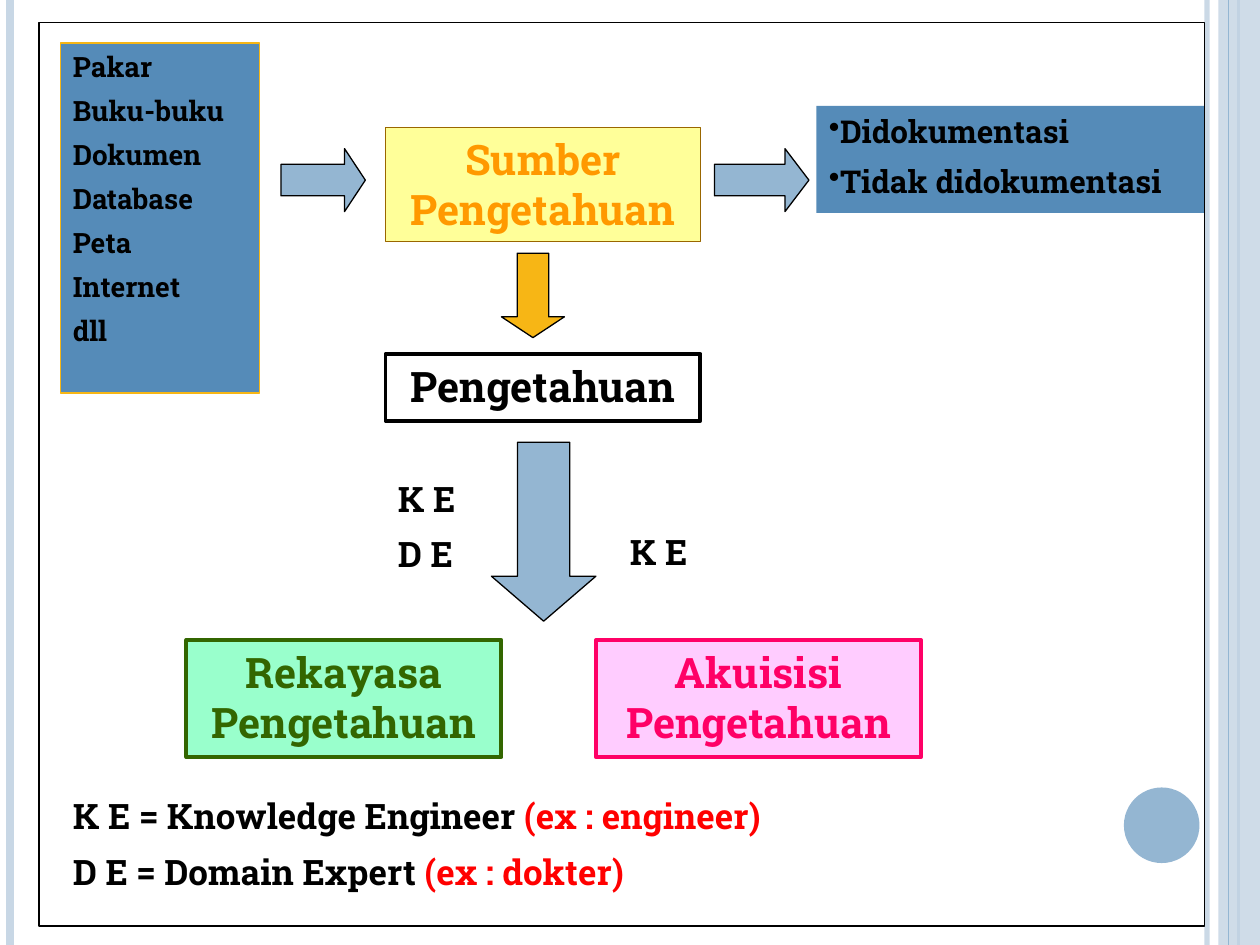
"""Build the knowledge sources and knowledge acquisition flow slide."""
from lxml.etree import SubElement
from pptx import Presentation
from pptx.dml.color import RGBColor
from pptx.enum.shapes import MSO_CONNECTOR, MSO_SHAPE as Shape
from pptx.enum.text import MSO_ANCHOR, PP_ALIGN as Align
from pptx.oxml.ns import qn
from pptx.util import Inches, Pt

FONT = "Roboto Slab"
BLACK = RGBColor(0x00, 0x00, 0x00)
RED = RGBColor(0xFF, 0x00, 0x00)
PALE_BLUE = RGBColor(0xC8, 0xD7, 0xE5)
SKY = RGBColor(0x94, 0xB6, 0xD2)
STEEL = RGBColor(0x55, 0x8B, 0xB8)
AMBER = RGBColor(0xF7, 0xB6, 0x15)
YELLOW = RGBColor(0xFF, 0xFF, 0x99)
BROWN = RGBColor(0x99, 0x66, 0x00)
ORANGE = RGBColor(0xFF, 0x99, 0x00)
PINK = RGBColor(0xFF, 0xCC, 0xFF)
MAGENTA = RGBColor(0xFF, 0x00, 0x66)
MINT = RGBColor(0x99, 0xFF, 0xCC)
GREEN = RGBColor(0x33, 0x66, 0x00)


def set_opacity(element, percent):
    color = next(element.iter(qn("a:srgbClr")))
    SubElement(color, qn("a:alpha"), val=str(percent * 1000))


def add_stripe(slide, x, color, width, opacity=100):
    stripe = slide.shapes.add_connector(
        MSO_CONNECTOR.STRAIGHT, Inches(x), 0, Inches(x), Inches(7.5))
    stripe.line.color.rgb = color
    stripe.line.width = Pt(width)
    properties = stripe.line._get_or_add_ln().getparent()
    SubElement(properties, qn("a:effectLst"))
    if opacity < 100:
        set_opacity(properties, opacity)


def add_block(slide, kind, at, fill=None, line=None, width=0.75):
    block = slide.shapes.add_shape(kind, *map(Inches, at))
    block.shadow.inherit = False
    if fill is None:
        block.fill.background()
    else:
        block.fill.solid()
        block.fill.fore_color.rgb = fill
    if line is None:
        block.line.fill.background()
    else:
        block.line.color.rgb = line
        block.line.width = Pt(width)
    return block


def add_arrow(slide, kind, at, head, fill=SKY):
    arrow = add_block(slide, kind, at, fill, BLACK)
    arrow.adjustments[1] = head


def write(holder, paragraphs, size, color=BLACK, align=Align.LEFT, bullet=None):
    """Write paragraphs, each a string or a list of (text, color) runs."""
    frame = holder.text_frame
    frame.word_wrap = True
    frame.vertical_anchor = MSO_ANCHOR.TOP
    for index, content in enumerate(paragraphs):
        paragraph = frame.add_paragraph() if index else frame.paragraphs[0]
        paragraph.alignment = align
        if index:
            paragraph.space_before = Pt(size * 0.375)
        if bullet:
            SubElement(paragraph._p.get_or_add_pPr(), qn("a:buChar"), char=bullet)
        runs = [(content, color)] if isinstance(content, str) else content
        for text, run_color in runs:
            run = paragraph.add_run()
            run.text = text
            run.font.name = FONT
            run.font.size = Pt(size)
            run.font.bold = True
            run.font.color.rgb = run_color


def add_stage(slide, title, at, color, fill=None, line=None, width=2.25):
    stage = add_block(slide, Shape.RECTANGLE, at, fill, line or color, width)
    write(stage, [title], 24, color, Align.CENTER)


def add_label(slide, paragraphs, at):
    write(slide.shapes.add_textbox(*map(Inches, at)), paragraphs, 20)


def add_backdrop(slide):
    add_stripe(slide, 9.58, PALE_BLUE, 3, 93)
    add_stripe(slide, 0.08, PALE_BLUE, 4.5)
    add_stripe(slide, 9.83, SKY, 1.5)
    band = add_block(slide, Shape.RECTANGLE, (9.67, 0, 0.33, 7.5), PALE_BLUE)
    set_opacity(band.fill._xPr, 87)
    add_stripe(slide, 9.75, SKY, 0.75)
    add_block(slide, Shape.OVAL, (8.92, 6.25, 0.6, 0.6), SKY)


def main():
    deck = Presentation()
    deck.slide_width, deck.slide_height = Inches(10), Inches(7.5)
    slide = deck.slides.add_slide(deck.slide_layouts[6])
    add_backdrop(slide)

    add_stage(slide, "Sumber Pengetahuan", (3.06, 1.01, 2.5, 0.91),
              ORANGE, YELLOW, BROWN, 0.75)
    add_arrow(slide, Shape.DOWN_ARROW, (3.9, 3.51, 0.83, 1.42), 0.43)

    sources = add_block(slide, Shape.RECTANGLE, (0.48, 0.34, 1.58, 2.78), STEEL, AMBER)
    write(sources, ["Pakar", "Buku-buku", "Dokumen", "Database", "Peta",
                    "Internet", "dll"], 16)
    add_arrow(slide, Shape.RIGHT_ARROW, (2.23, 1.18, 0.67, 0.5), 0.33)
    add_arrow(slide, Shape.RIGHT_ARROW, (5.67, 1.18, 0.75, 0.5), 0.38)
    documentation = add_block(slide, Shape.RECTANGLE, (6.48, 0.84, 3.08, 0.85), STEEL)
    write(documentation, ["Didokumentasi", "Tidak didokumentasi"], 18, bullet="•")

    add_stage(slide, "Akuisisi Pengetahuan", (4.73, 5.08, 2.58, 0.93), MAGENTA, PINK)
    add_stage(slide, "Rekayasa Pengetahuan", (1.48, 5.08, 2.5, 0.93), GREEN, MINT)
    add_label(slide, ["K E"], (4.9, 4.16, 1.17, 0.43))
    add_label(slide, ["K E", "D E"], (3.06, 3.74, 1.17, 0.93))
    add_label(slide, [
        [("K E = Knowledge Engineer ", BLACK), ("(ex : engineer)", RED)],
        [("D E = Domain Expert ", BLACK), ("(ex : dokter)", RED)],
    ], (0.48, 6.26, 7.04, 0.93))

    add_stage(slide, "Pengetahuan", (3.06, 2.81, 2.5, 0.53), BLACK)
    add_arrow(slide, Shape.DOWN_ARROW, (3.98, 2.01, 0.5, 0.67), 0.33, AMBER)
    add_block(slide, Shape.RECTANGLE, (0.31, 0.18, 9.25, 7.17), line=BLACK)
    deck.save("out.pptx")


if __name__ == "__main__":
    main()
